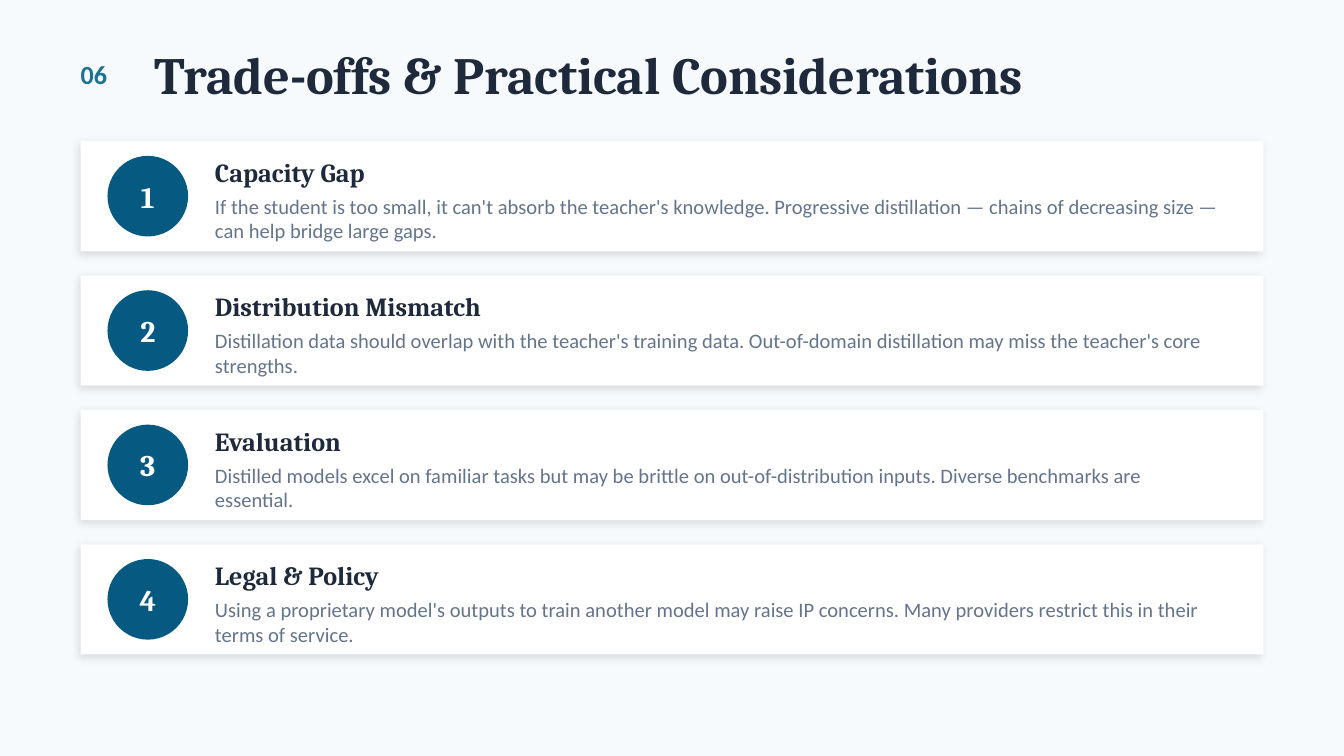
import dataclasses

import lxml.etree
import pptx
import pptx.dml.color
import pptx.enum.shapes
import pptx.enum.text
import pptx.oxml.ns
import pptx.util

Pt = pptx.util.Pt
RGBColor = pptx.dml.color.RGBColor
MSO_SHAPE = pptx.enum.shapes.MSO_SHAPE
PP_ALIGN = pptx.enum.text.PP_ALIGN


@dataclasses.dataclass(frozen=True)
class Theme:
    background: str = "F7FAFC"
    card: str = "FFFFFF"
    badge: str = "065A82"
    accent: str = "1C7293"
    ink: str = "1E293B"
    muted: str = "64748B"
    on_badge: str = "FFFFFF"
    shadow: str = "000000"
    heading_font: str = "Cambria"
    body_font: str = "Calibri"
    title_size: int = 28
    badge_size: int = 16
    heading_size: int = 14
    body_size: int = 11


class SlideBuilder:
    def __init__(self, slide, theme):
        self.slide = slide
        self.theme = theme
        fill = slide.background.fill
        fill.solid()
        fill.fore_color.rgb = RGBColor.from_string(theme.background)

    def text(self, content, box, size, color, font, bold=True, align=PP_ALIGN.LEFT):
        shape = self.slide.shapes.add_textbox(*map(Pt, box))
        text_frame = shape.text_frame
        text_frame.word_wrap = True
        text_frame.vertical_anchor = pptx.enum.text.MSO_ANCHOR.MIDDLE
        text_frame.margin_left = text_frame.margin_right = 0
        text_frame.margin_top = text_frame.margin_bottom = 0
        text_frame.text = content
        paragraph = text_frame.paragraphs[0]
        paragraph.alignment = align
        run_font = paragraph.runs[0].font
        run_font.name = font
        run_font.size = Pt(size)
        run_font.bold = bold
        run_font.color.rgb = RGBColor.from_string(color)

    def shape(self, preset, box, color):
        shape = self.slide.shapes.add_shape(preset, *map(Pt, box))
        shape.shadow.inherit = False
        shape.fill.solid()
        shape.fill.fore_color.rgb = RGBColor.from_string(color)
        shape.line.fill.background()
        return shape

    def soft_shadow(self, shape):
        """Give the shape a faint outer shadow, cast down and to the left."""
        qn = pptx.oxml.ns.qn
        effects = shape.element.spPr.find(qn("a:effectLst"))
        shadow = lxml.etree.SubElement(
            effects, qn("a:outerShdw"), blurRad=str(Pt(5)), dist=str(Pt(2)),
            dir=str(135 * 60000), algn="bl", rotWithShape="0")
        color = lxml.etree.SubElement(shadow, qn("a:srgbClr"), val=self.theme.shadow)
        lxml.etree.SubElement(color, qn("a:alpha"), val="12000")

    def header(self, number, title):
        theme = self.theme
        self.text(number, (43.2, 25.2, 43.2, 28.8), theme.heading_size,
                  theme.accent, theme.body_font)
        self.text(title, (82.8, 21.6, 504, 36), theme.title_size,
                  theme.ink, theme.heading_font)

    def card(self, number, heading, body, top):
        theme = self.theme
        card = self.shape(MSO_SHAPE.RECTANGLE, (43.2, top, 633.6, 59.04), theme.card)
        self.soft_shadow(card)
        badge_box = (57.6, top + 7.92, 43.2, 43.2)
        self.shape(MSO_SHAPE.OVAL, badge_box, theme.badge)
        self.text(str(number), badge_box, theme.badge_size, theme.on_badge,
                  theme.heading_font, align=PP_ALIGN.CENTER)
        self.text(heading, (115.2, top + 5.76, 540, 21.6), theme.heading_size,
                  theme.ink, theme.heading_font)
        self.text(body, (115.2, top + 28.8, 540, 25.2), theme.body_size,
                  theme.muted, theme.body_font, bold=False)


CONSIDERATIONS = [
    ("Capacity Gap",
     "If the student is too small, it can't absorb the teacher's knowledge. "
     "Progressive distillation — chains of decreasing size — can help bridge large gaps."),
    ("Distribution Mismatch",
     "Distillation data should overlap with the teacher's training data. "
     "Out-of-domain distillation may miss the teacher's core strengths."),
    ("Evaluation",
     "Distilled models excel on familiar tasks but may be brittle on "
     "out-of-distribution inputs. Diverse benchmarks are essential."),
    ("Legal & Policy",
     "Using a proprietary model's outputs to train another model may raise IP concerns. "
     "Many providers restrict this in their terms of service."),
]
FIRST_CARD_TOP = 75.6
CARD_PITCH = 72


def main():
    presentation = pptx.Presentation()
    presentation.slide_width = Pt(720)
    presentation.slide_height = Pt(405)
    slide = presentation.slides.add_slide(presentation.slide_layouts[6])
    builder = SlideBuilder(slide, Theme())
    builder.header("06", "Trade-offs & Practical Considerations")
    for index, (heading, body) in enumerate(CONSIDERATIONS):
        builder.card(index + 1, heading, body, FIRST_CARD_TOP + index * CARD_PITCH)
    presentation.save("out.pptx")


if __name__ == "__main__":
    main()
